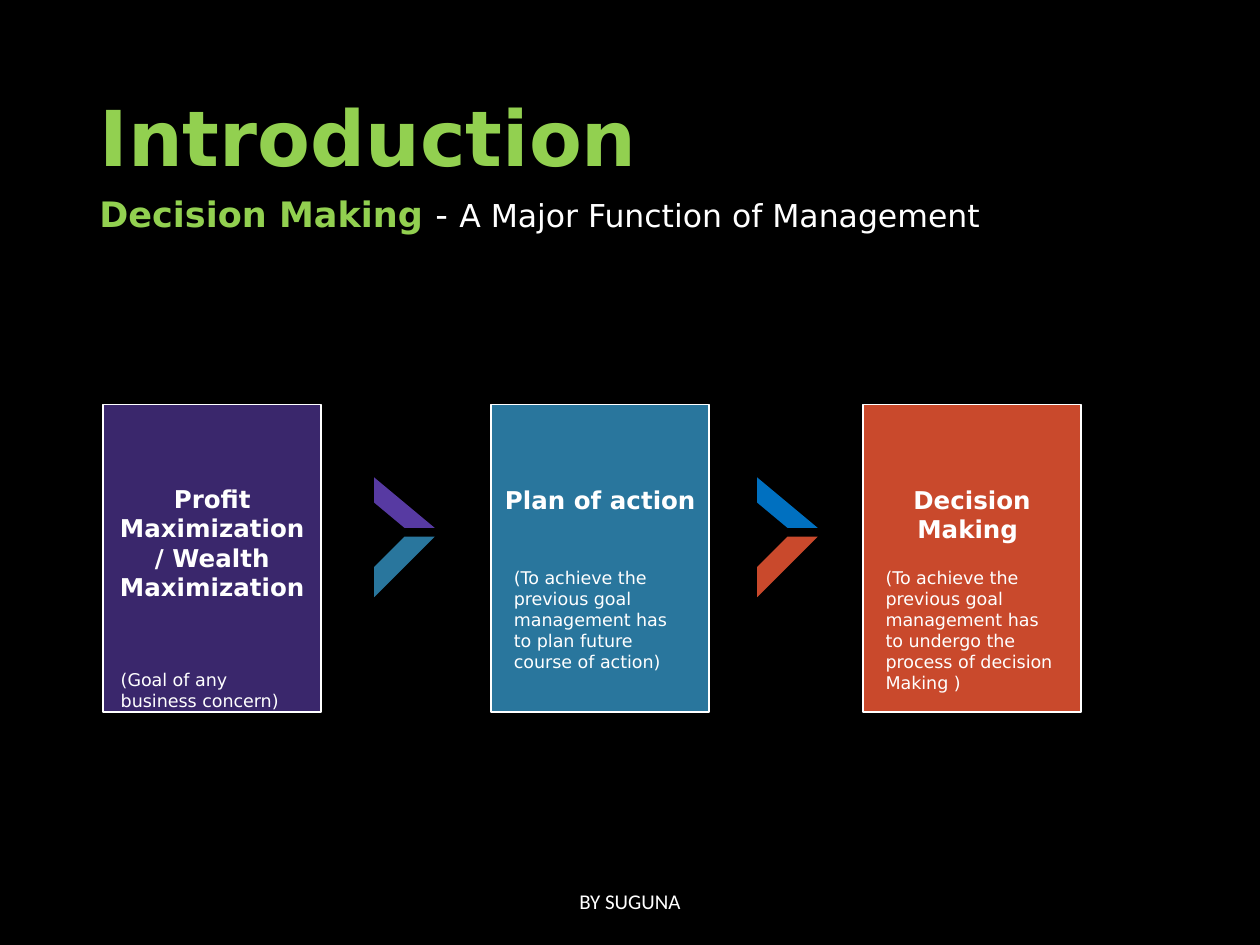
from dataclasses import dataclass

from pptx import Presentation
from pptx.dml.color import RGBColor
from pptx.enum.shapes import MSO_SHAPE
from pptx.enum.text import MSO_ANCHOR, PP_ALIGN
from pptx.util import Inches, Pt

RECT, STRIPE = MSO_SHAPE.RECTANGLE, MSO_SHAPE.DIAGONAL_STRIPE
TOP, MIDDLE = MSO_ANCHOR.TOP, MSO_ANCHOR.MIDDLE
LEFT, CENTER = PP_ALIGN.LEFT, PP_ALIGN.CENTER

W, H = Inches(10), Inches(7.5)
COLS, ROWS = 100, 75  # square grid cells
FONT = "DejaVu Sans"
COLORS = {
    "black": "000000", "white": "FFFFFF", "green": "92D050",
    "indigo": "3A276C", "violet": "573AA2", "teal": "29769D",
    "blue": "0070C0", "rust": "C9492C",
}


@dataclass
class Run:
    text: str
    size: float
    color: str = "white"
    bold: bool = False


@dataclass
class Card:
    col: float
    fill: str
    heading: str
    note: str
    note_col: float = 0.8  # offset from the card's left edge
    note_row: float = 44.5
    heading_row: float = 38


@dataclass
class Chevron:
    col: float
    upper: str
    lower: str


CARD_W, CARD_H, CARD_ROW = 17.3, 24.4, 32.1
NOTE_W = 15.8
CARDS = [
    Card(8.2, "indigo", "Profit Maximization/ Wealth Maximization",
         "(Goal of any business concern)", 0.4, 52.6, 37.9),
    Card(39, "teal", "Plan of action ",
         "(To achieve the previous goal management has to plan future "
         "course of action)"),
    Card(68.5, "rust", "Decision Making ",
         "(To achieve the previous goal management has to undergo the "
         "process of decision Making )"),
]
CHEVRONS = [Chevron(29.7, "violet", "teal"), Chevron(60.1, "blue", "rust")]


def rgb(name: str) -> RGBColor:
    return RGBColor.from_string(COLORS[name])


def cells(col: float, row: float, width: float, height: float) -> list[int]:
    return [int(W * col / COLS), int(H * row / ROWS),
            int(W * width / COLS), int(H * height / ROWS)]


def add_text(s, box: list[int], runs: list[Run], align=LEFT, anchor=TOP,
             font: str = FONT, spacing: float = 1.0) -> None:
    tf = s.shapes.add_textbox(*box).text_frame
    tf.word_wrap = True
    tf.vertical_anchor = anchor
    p = tf.paragraphs[0]
    p.alignment = align
    p.line_spacing = spacing
    p.font.name = font
    for run in runs:
        r = p.add_run()
        r.text = run.text
        r.font.name = font
        r.font.size = Pt(run.size)
        r.font.bold = run.bold
        r.font.color.rgb = rgb(run.color)


def add_filled(s, kind, box: list[int], fill: str):
    sp = s.shapes.add_shape(kind, *box)
    sp.shadow.inherit = False
    sp.fill.solid()
    sp.fill.fore_color.rgb = rgb(fill)
    sp.line.fill.background()
    return sp


def add_card(s, card: Card) -> None:
    sp = add_filled(s, RECT, cells(card.col, CARD_ROW, CARD_W, CARD_H), card.fill)
    sp.line.color.rgb = rgb("white")
    sp.line.width = Pt(1)
    add_text(s, cells(card.col, card.heading_row, CARD_W, 10.4),
             [Run(card.heading, 14, bold=True)], CENTER)
    add_text(s, cells(card.col + card.note_col, card.note_row, NOTE_W, 6.1),
             [Run(card.note, 10)])


def add_chevron(s, chevron: Chevron) -> None:
    add_filled(s, STRIPE, cells(chevron.col, 42.6, 4.8, 4.8), chevron.lower)
    upper = add_filled(s, STRIPE, cells(chevron.col, 37.9, 4.8, 4), chevron.upper)
    upper._element.spPr.xfrm.set("flipV", "1")


def main() -> None:
    prs = Presentation()
    prs.slide_width, prs.slide_height = W, H
    s = prs.slides.add_slide(prs.slide_layouts[6])
    s.background.fill.solid()
    s.background.fill.fore_color.rgb = rgb("black")

    # Title and subtitle
    add_text(s, cells(6.9, 4, 86.2, 14.5),
             [Run("Introduction", 44, "green", True)], anchor=MIDDLE, spacing=0.9)
    add_text(s, cells(6.9, 14.8, 86.2, 4.4),
             [Run("Decision Making ", 20, "green", True), Run("- ", 20),
              Run("A Major Function of Management", 18)])

    # Process: cards joined by chevrons
    for chevron in CHEVRONS:
        add_chevron(s, chevron)
    for card in CARDS:
        add_card(s, card)

    # Footer
    add_text(s, cells(33.1, 69.5, 33.8, 4), [Run("BY SUGUNA", 12)],
             CENTER, MIDDLE, "Calibri")
    prs.save("out.pptx")


if __name__ == "__main__":
    main()
